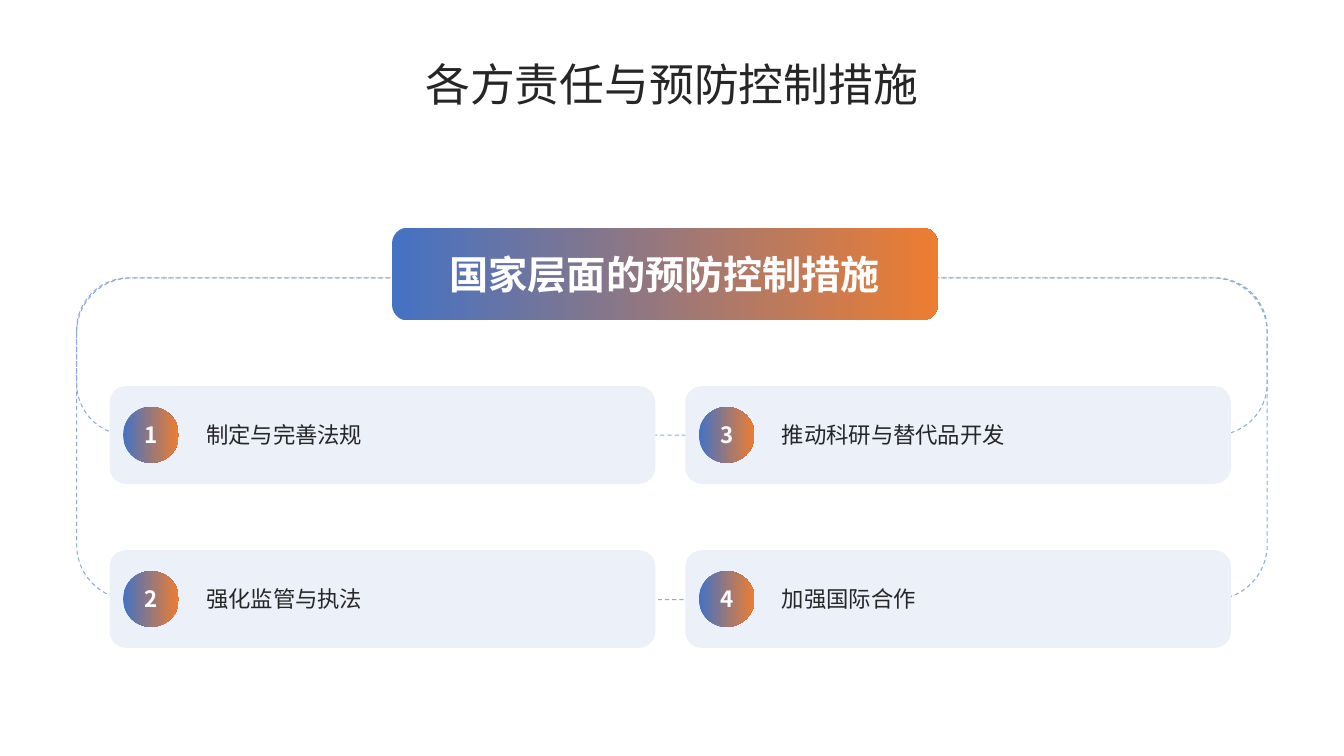
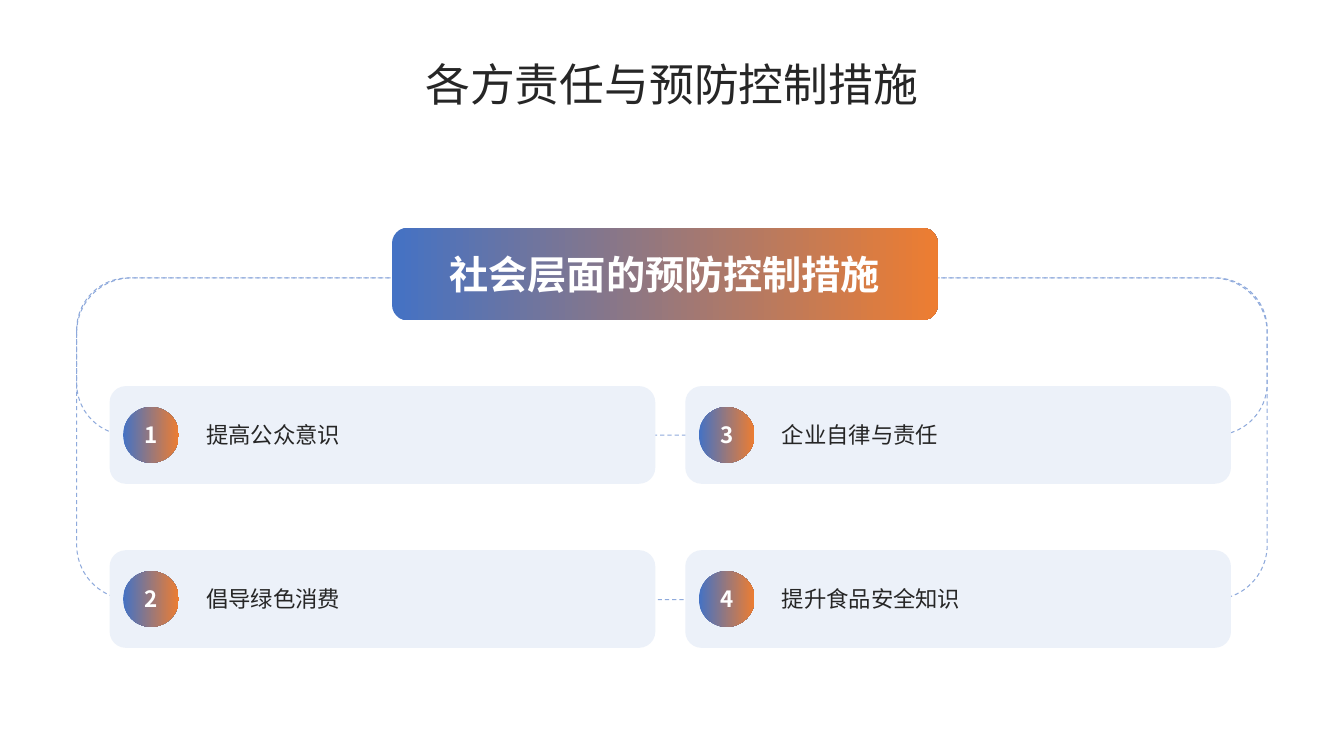
from lxml import etree
from pptx import Presentation
from pptx.dml.color import RGBColor
from pptx.enum import dml, shapes, text
from pptx.oxml import ns
from pptx.util import Pt

HUES = {"ink": "262626", "white": "FFFFFF", "card": "ECF1F9",
        "dash": "8FAADC", "blue": "4472C4", "orange": "ED7D31"}
FONTS = {"title": "Noto Sans CJK JP", "body": "Noto Sans CJK SC"}
ROUND = shapes.MSO_SHAPE.ROUNDED_RECTANGLE
OVAL = shapes.MSO_SHAPE.OVAL
LEFT, CENTER = text.PP_ALIGN.LEFT, text.PP_ALIGN.CENTER
TITLE = "各方责任与预防控制措施"
PAGES = [
    ("国家层面的预防控制措施",
     ["制定与完善法规", "强化监管与执法", "推动科研与替代品开发", "加强国际合作"]),
    ("社会层面的预防控制措施",
     ["提高公众意识", "倡导绿色消费", "企业自律与责任", "提升食品安全知识"]),
]


def hue(name):
    """Return the named colour."""
    return RGBColor.from_string(HUES[name])


def write(shape, words, size, color, face="body", bold=False, align=CENTER):
    """Write one styled line, centred in height, and return its paragraph."""
    frame = shape.text_frame
    frame.vertical_anchor = text.MSO_ANCHOR.MIDDLE
    line = frame.paragraphs[0]
    line.alignment = align
    run = line.add_run()
    run.text = words
    font = run.font
    font.size, font.bold, font.name = Pt(size), bold, FONTS[face]
    font.color.rgb = hue(color)
    east = etree.SubElement(font._element, ns.qn("a:ea"))
    east.set("typeface", FONTS[face])
    return line


def shape(slide, kind, box):
    """Add a plain shape without fill, line or shadow."""
    item = slide.shapes.add_shape(kind, *map(Pt, box))
    item.shadow.inherit = False
    item.fill.background()
    item.line.fill.background()
    return item


def blend(item):
    """Fill a shape from blue to orange, left to right."""
    item.fill.gradient()
    item.fill.gradient_angle = 0
    for stop, name in zip(item.fill.gradient_stops, ("blue", "orange")):
        stop.color.rgb = hue(name)


def title(slide, box):
    """Place the slide title."""
    item = slide.shapes.add_textbox(*map(Pt, box))
    item.text_frame.word_wrap = True
    write(item, TITLE, 32, "ink", "title").line_spacing = 0.9


def loop(slide, box, curve):
    """Draw a dashed loop that links the banner with a row of cards."""
    item = shape(slide, ROUND, box)
    item.adjustments[0] = curve
    item.line.color.rgb = hue("dash")
    item.line.width = Pt(0.75)
    item.line.dash_style = dml.MSO_LINE.DASH


def card(slide, box, number, words):
    """Place a card with its numbered disc."""
    x, y, w, h = box
    panel = shape(slide, ROUND, box)
    panel.fill.solid()
    panel.fill.fore_color.rgb = hue("card")
    frame = panel.text_frame
    frame.margin_left, frame.margin_right = Pt(65.5), Pt(8.6)
    write(panel, words, 16, "ink", align=LEFT)
    size = 39.8
    disc = shape(slide, OVAL, (x + 9.7, y + (h - size) / 2, size, size))
    blend(disc)
    disc.text_frame.word_wrap = False
    write(disc, str(number), 16, "white", bold=True)


def cards(slide, box, items):
    """Lay out the cards in two columns, column by column."""
    x, y, w, h = box
    wide, high = 389.8, 69.8
    for i, words in enumerate(items):
        col, row = divmod(i, 2)
        spot = (x + col * (w - wide), y + row * (h - high), wide, high)
        card(slide, spot, i + 1, words)


def banner(slide, box, words):
    """Place the gradient heading."""
    item = shape(slide, ROUND, box)
    blend(item)
    write(item, words, 28, "white", bold=True)


def page(deck, head, items):
    """Build one slide of measures."""
    slide = deck.slides.add_slide(deck.slide_layouts[6])
    x, w = 54.8, 850.4
    title(slide, (x, 31, w, 62.6))
    for high, curve in ((112.3, 0.33), (229.8, 0.17)):
        loop(slide, (x, 198.5, w, high), curve)
    cards(slide, (78.3, 275.8, 801, 187), items)
    banner(slide, (280, 162.8, 389.8, 66), head)


def main():
    """Build and save the deck."""
    deck = Presentation()
    deck.slide_width, deck.slide_height = Pt(960), Pt(540)
    for head, items in PAGES:
        page(deck, head, items)
    deck.save("out.pptx")


if __name__ == "__main__":
    main()
